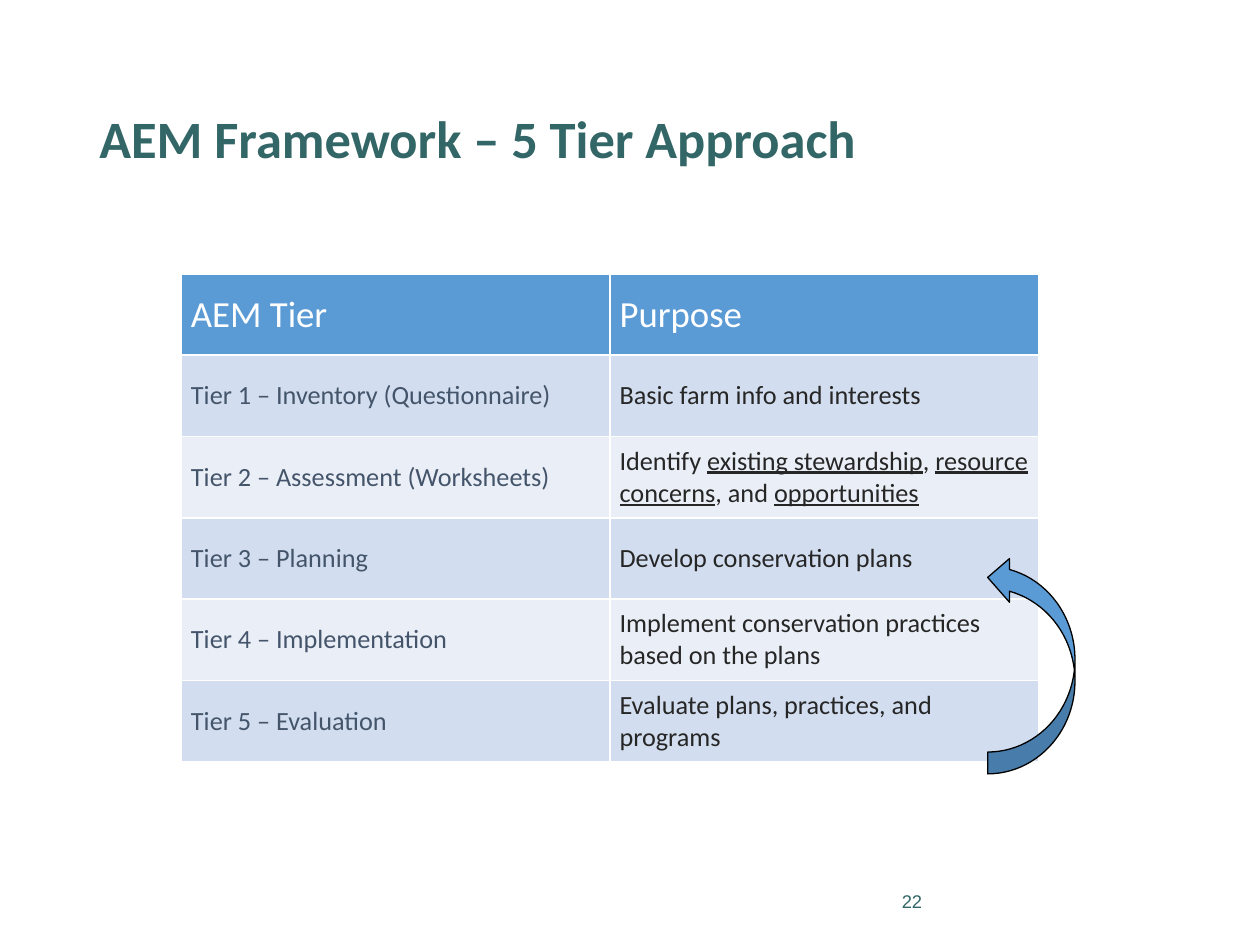
from pptx import Presentation
from pptx import util as u
from pptx.dml.color import RGBColor
from pptx.enum import shapes, text

GREEN, BLUE, SLATE, INK = "336666", "5B9BD5", "44546A", "262626"
BANDS = ("D2DEEF", "EAEFF7")
HEAD = ("AEM Tier", "Purpose")
TIERS = (
    ("Tier 1 – Inventory (Questionnaire)", "Basic farm info and interests"),
    ("Tier 2 – Assessment (Worksheets)",
     "Identify _existing stewardship_, _resource concerns_, and _opportunities_"),
    ("Tier 3 – Planning", "Develop conservation plans"),
    ("Tier 4 – Implementation",
     "Implement conservation practices based on the plans"),
    ("Tier 5 – Evaluation", "Evaluate plans, practices, and programs"),
)


def color(code):
    return RGBColor.from_string(code)


def paint(item, code):
    item.fill.solid()
    item.fill.fore_color.rgb = color(code)


def write(frame, words, size, code, font="Calibri", bold=False, space=None):
    """Fill the frame; parts between underscores are underlined."""
    frame.word_wrap = True
    frame.vertical_anchor = text.MSO_ANCHOR.MIDDLE
    para = frame.paragraphs[0]
    para.alignment = text.PP_ALIGN.LEFT
    para.line_spacing = space
    for i, part in enumerate(words.split("_")):
        run = para.add_run()
        run.text = part
        face = run.font
        face.name, face.size, face.bold = font, u.Pt(size), bold
        face.color.rgb = color(code)
        if i % 2:
            face.underline = True


def add_title(slide, words):
    title = slide.shapes.title
    title.left, title.top = u.Cm(1.75), u.Cm(1.02)
    title.width, title.height = u.Cm(21.9), u.Cm(3.68)
    write(title.text_frame, words, 30, GREEN, bold=True, space=0.9)


def fill_cell(cell, words, size, code, back):
    cell.margin_left = cell.margin_right = u.Cm(0.19)
    cell.margin_top = cell.margin_bottom = u.Cm(0.1)
    paint(cell, back)
    write(cell.text_frame, words, size, code)
    cell.vertical_anchor = text.MSO_ANCHOR.MIDDLE


def add_tiers(slide):
    grid = slide.shapes.add_table(
        len(TIERS) + 1, len(HEAD),
        u.Cm(3.66), u.Cm(5.52), u.Cm(17.28), u.Cm(9.84)).table
    for col, words in enumerate(HEAD):
        fill_cell(grid.cell(0, col), words, 21, "FFFFFF", BLUE)
    for row, pair in enumerate(TIERS, 1):
        for col, (words, code) in enumerate(zip(pair, (SLATE, INK))):
            fill_cell(grid.cell(row, col), words, 15, code, BANDS[(row - 1) % 2])


def add_loop(slide):
    """Arrow leading from the last tier back to planning."""
    arrow = slide.shapes.add_shape(
        shapes.MSO_SHAPE.CURVED_RIGHT_ARROW,
        u.Cm(19.91), u.Cm(11.2), u.Cm(1.76), u.Cm(4.4))
    arrow.rotation = 180
    arrow.shadow.inherit = False
    paint(arrow, BLUE)
    arrow.line.color.rgb = color("000000")
    arrow.line.width = u.Pt(0.75)


def add_number(slide, words):
    box = slide.shapes.add_textbox(
        u.Cm(17.93), u.Cm(17.65), u.Cm(5.72), u.Cm(1.02))
    write(box.text_frame, words, 10.5, GREEN, font="Arial")


def main():
    deck = Presentation()
    deck.slide_width, deck.slide_height = u.Cm(25.4), u.Cm(19.05)
    slide = deck.slides.add_slide(deck.slide_layouts[5])
    add_title(slide, "AEM Framework – 5 Tier Approach")
    add_number(slide, "22")
    add_tiers(slide)
    add_loop(slide)
    deck.save("out.pptx")


if __name__ == "__main__":
    main()
